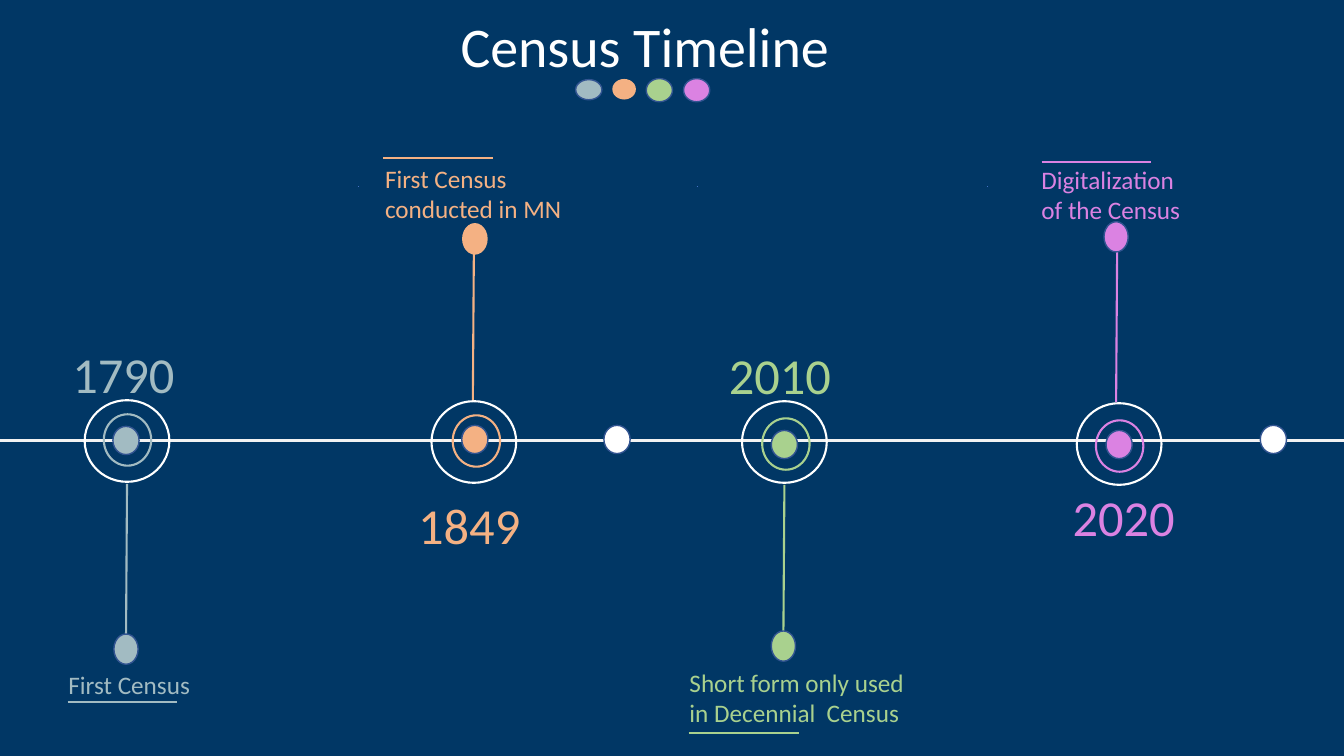
from dataclasses import dataclass

from lxml import etree
from pptx import Presentation
from pptx.dml.color import RGBColor
from pptx.enum import shapes, text
from pptx.oxml import ns
from pptx.util import Pt

PX = 9144  # 100 px to the inch
COLORS = {
    "background": "013765", "white": "FFFFFF", "axis": "F2F2F2",
    "edge": "325491", "arc": "4472C4",
    "gray": "A2BBC2", "orange": "F4B183", "green": "A9D18E", "pink": "DB82E2",
}
OVAL = shapes.MSO_SHAPE.OVAL


@dataclass
class Milestone:
    """Boxes are (left, top, width, height); other places are (left, top)."""
    color: str
    year: str
    year_box: tuple
    caption: str
    caption_box: tuple
    rule: tuple
    halo: tuple
    ring: tuple
    dot: tuple
    stem: tuple
    bulb: tuple
    bulb_edge: str = "edge"


MILESTONES = [
    Milestone("gray", "1790", (62, 335, 270, 71),
              "First Census", (58, 659, 175, 40), (67, 696),
              (84, 397), (103, 411), (112, 423), (126, 480), (113, 629)),
    Milestone("orange", "1849", (405, 485, 133, 71),
              "First Census conducted in MN", (372, 157, 215, 71), (380, 157),
              (428, 398), (449, 412), (458, 422), (470, 247), (459, 222), "orange"),
    Milestone("green", "2010", (713, 336, 270, 71),
              "Short form only used in Decennial  Census", (674, 657, 247, 71), (683, 727),
              (736, 398), (756, 415), (765, 427), (778, 481), (765, 626)),
    Milestone("pink", "2020", (1054, 477, 270, 71),
              "Digitalization of the Census", (1023, 158, 175, 71), (1033, 161),
              (1068, 400), (1087, 417), (1097, 427), (1108, 249), (1095, 220)),
]
LEGEND = [
    ("gray", "edge", (571, 79, 26, 20)), ("orange", "orange", (608, 79, 22, 19)),
    ("green", "edge", (641, 78, 26, 23)), ("pink", "edge", (678, 78, 26, 23)),
]


def rgb(name):
    return RGBColor.from_string(COLORS[name])


def emu(*lengths):
    return [length * PX for length in lengths]


def add_outline(page, kind, box, line, width, fill=None):
    shape = page.shapes.add_shape(kind, *emu(*box))
    shape.shadow.inherit = False
    if fill:
        shape.fill.solid()
        shape.fill.fore_color.rgb = rgb(fill)
    else:
        shape.fill.background()
    shape.line.color.rgb = rgb(line)
    shape.line.width = Pt(width)
    return shape


def add_line(page, start, end, color):
    line = page.shapes.add_connector(shapes.MSO_CONNECTOR.STRAIGHT, *emu(*start, *end))
    line.line.color.rgb = rgb(color)
    line.line.width = Pt(1.5)
    etree.SubElement(line._element.spPr, ns.qn("a:effectLst"))


def write(frame, words, size, color):
    frame.word_wrap = True
    frame.vertical_anchor = text.MSO_ANCHOR.TOP
    frame.text = words
    para = frame.paragraphs[0]
    para.font.name = "Calibri"
    para.font.size = Pt(size)
    para.font.color.rgb = rgb(color)
    return para


def add_text(page, words, box, size, color):
    write(page.shapes.add_textbox(*emu(*box)).text_frame, words, size, color)


def add_title(page, words, box):
    title = page.shapes.title
    title.left, title.top, title.width, title.height = emu(*box)
    para = write(title.text_frame, words, 40, "white")
    para.alignment = text.PP_ALIGN.CENTER
    para.line_spacing = 1.0


def add_milestone(page, item):
    add_outline(page, OVAL, (*item.ring, 47, 51), item.color, 1.5)
    add_outline(page, OVAL, (*item.dot, 26, 28), "edge", 1, item.color)
    add_outline(page, OVAL, (*item.halo, 84, 81), "white", 1.5)
    left, top = item.stem
    add_line(page, item.stem, (left - 1, top + 150), item.color)
    add_outline(page, OVAL, (*item.bulb, 24, 30), item.bulb_edge, 1, item.color)
    add_text(page, item.year, item.year_box, 36, item.color)
    add_text(page, item.caption, item.caption_box, 18, item.color)
    left, top = item.rule
    add_line(page, item.rule, (left + 109, top), item.color)


def add_arc(page, left):
    arc = add_outline(page, shapes.MSO_SHAPE.ARC, (left, 185, 80, 47), "arc", 0.5)
    arc.adjustments[0] = 162
    arc.adjustments[1] = 163.01


def main():
    deck = Presentation()
    deck.slide_width, deck.slide_height = emu(1333, 750)
    page = deck.slides.add_slide(deck.slide_layouts[5])
    page.background.fill.solid()
    page.background.fill.fore_color.rgb = rgb("background")

    add_title(page, "Census Timeline", (431, 6, 417, 77))
    add_line(page, (0, 437), (1333, 437), "axis")
    for item in MILESTONES:
        add_milestone(page, item)
    for left in (315, 651, 939):
        add_arc(page, left)
    for color, edge, box in LEGEND:
        add_outline(page, OVAL, box, edge, 1, color)
    for left in (599, 1250):
        add_outline(page, OVAL, (left, 422, 26, 28), "edge", 1, "white")
    deck.save("out.pptx")


if __name__ == "__main__":
    main()
